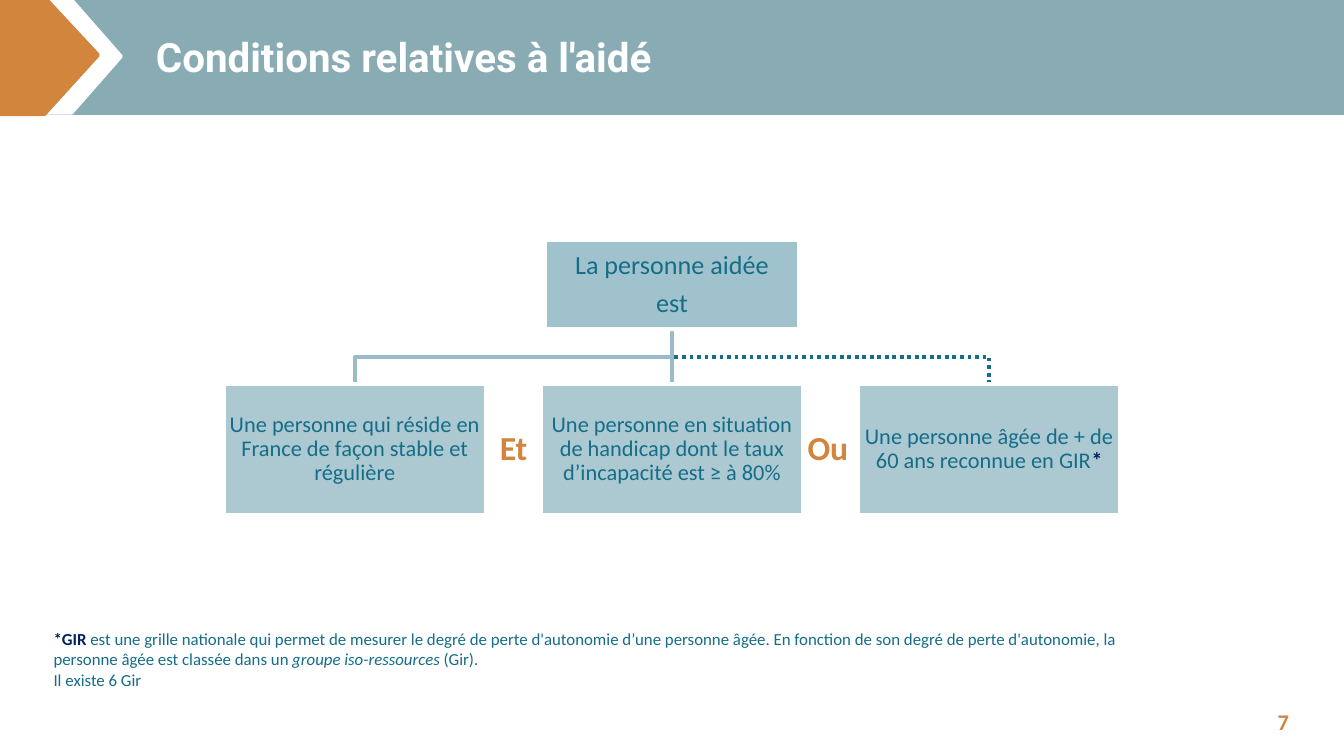
from dataclasses import dataclass

from lxml import etree
from pptx import Presentation
from pptx import util as u
from pptx.dml.color import RGBColor
from pptx.enum import dml, shapes, text
from pptx.oxml.ns import qn

WIDTH = 10
HEIGHT = WIDTH * 9 / 16
CENTER = WIDTH / 2
BAND_HEIGHT = 0.84
COLUMN_PITCH = 2.36
ROOT_TOP, BRANCH_TOP = 1.79, 2.86
ROOT_WIDTH, ROOT_HEIGHT = 1.89, 0.66
BRANCH_WIDTH, BRANCH_HEIGHT = 1.95, 0.97
COLORS = {
    "band": "89ABB3", "accent": "D2853D", "white": "FFFFFF", "box": "89B3C0",
    "link": "9ABCC7", "teal": "156D88", "navy": "002060",
}


@dataclass
class Span:
    words: str
    color: str = "teal"
    bold: bool = False
    italic: bool = False


@dataclass
class Box:
    left: float
    top: float
    width: float
    height: float


@dataclass
class Condition:
    column: int
    spans: list[Span]


@dataclass
class Label:
    box: Box
    lines: list[list[Span]]
    size: float
    wrap: bool = True
    align: text.PP_ALIGN = text.PP_ALIGN.LEFT
    anchor: text.MSO_ANCHOR = text.MSO_ANCHOR.TOP


CONDITIONS = [
    Condition(-1, [Span("Une personne qui réside en France de façon stable et régulière")]),
    Condition(0, [Span("Une personne en situation de handicap dont le taux d’incapacité est ≥ à 80%")]),
    Condition(1, [Span("Une personne âgée de + de 60 ans reconnue en GIR"), Span("*", "navy", True)]),
]
LABELS = [
    Label(Box(3.62, 3.13, 0.41, 0.4), [[Span("Et", "accent", True)]], 18, wrap=False),
    Label(Box(5.91, 3.13, 0.51, 0.4), [[Span("Ou", "accent", True)]], 18, wrap=False),
    Label(Box(0.3, 4.63, 8.52, 0.56), [
        [Span("*GIR ", "navy", True),
         Span("est une grille nationale qui permet de mesurer le degré de perte d'autonomie "
              "d’une personne âgée. En fonction de son degré de perte d'autonomie, la personne "
              "âgée est classée dans un "),
         Span("groupe iso-ressources", italic=True), Span(" (Gir).")],
        [Span("Il existe 6 Gir")],
    ], 9),
    Label(Box(7.36, 5.22, 2.33, 0.3), [[Span("7", "accent", True)]], 12,
          align=text.PP_ALIGN.RIGHT, anchor=text.MSO_ANCHOR.MIDDLE),
]


def rgb(name: str) -> RGBColor:
    return RGBColor.from_string(COLORS[name])


def place(shape, box: Box) -> None:
    shape.left, shape.top = u.Inches(box.left), u.Inches(box.top)
    shape.width, shape.height = u.Inches(box.width), u.Inches(box.height)


def paint(shape, fill: str, line: str, opacity: int = 100) -> None:
    shape.shadow.inherit = False
    shape.fill.solid()
    shape.fill.fore_color.rgb = rgb(fill)
    shape.line.color.rgb = rgb(line)
    shape.line.width = u.Pt(2)
    if opacity < 100:
        color = shape.fill._xPr.find(qn("a:solidFill"))[0]
        etree.SubElement(color, qn("a:alpha")).set("val", str(opacity * 1000))


def add_preset(slide, kind: shapes.MSO_SHAPE, box: Box, fill: str, line: str, opacity: int = 100):
    shape = slide.shapes.add_shape(kind, 0, 0, 0, 0)
    place(shape, box)
    paint(shape, fill, line, opacity)
    return shape


def add_outline(slide, points: list[tuple[float, float]], close: bool):
    start, *rest = [(u.Inches(x), u.Inches(y)) for x, y in points]
    builder = slide.shapes.build_freeform(*start)
    builder.add_line_segments(rest, close=close)
    return builder.convert_to_shape()


def write(frame, lines: list[list[Span]], size: float, align: text.PP_ALIGN) -> None:
    for row, spans in enumerate(lines):
        paragraph = frame.paragraphs[0] if row == 0 else frame.add_paragraph()
        paragraph.alignment = align
        paragraph.font.size = u.Pt(size)
        paragraph.font.name = "Calibri"
        for span in spans:
            run = paragraph.add_run()
            run.text = span.words
            run.font.color.rgb = rgb(span.color)
            run.font.bold = span.bold
            run.font.italic = span.italic


def add_node(slide, box: Box, lines: list[list[Span]], size: float, opacity: int):
    node = add_preset(slide, shapes.MSO_SHAPE.RECTANGLE, box, "box", "white", opacity)
    frame = node.text_frame
    frame.word_wrap = True
    frame.vertical_anchor = text.MSO_ANCHOR.MIDDLE
    frame.margin_left = frame.margin_right = u.Inches(0.01)
    frame.margin_top = frame.margin_bottom = u.Inches(0.01)
    write(frame, lines, size, text.PP_ALIGN.CENTER)
    for paragraph in frame.paragraphs:
        paragraph.line_spacing = 0.9
        paragraph.space_after = u.Pt(size * 0.35)
    return node


def add_branch(slide, column: int) -> None:
    start, end = ROOT_TOP + ROOT_HEIGHT, BRANCH_TOP
    middle, target = (start + end) / 2, CENTER + column * COLUMN_PITCH
    branch = add_outline(
        slide, [(CENTER, start), (CENTER, middle), (target, middle), (target, end)], close=False)
    branch.shadow.inherit = False
    branch.fill.background()
    branch.line.width = u.Pt(2)
    branch.line.color.rgb = rgb("teal" if column > 0 else "link")
    if column > 0:
        branch.line.dash_style = dml.MSO_LINE.ROUND_DOT


def add_label(slide, label: Label) -> None:
    box = slide.shapes.add_textbox(0, 0, 0, 0)
    place(box, label.box)
    box.text_frame.word_wrap = label.wrap
    box.text_frame.vertical_anchor = label.anchor
    write(box.text_frame, label.lines, label.size, label.align)


def add_header(slide) -> None:
    add_preset(slide, shapes.MSO_SHAPE.RECTANGLE, Box(0, 0, WIDTH, BAND_HEIGHT), "band", "band")
    chevron = add_preset(
        slide, shapes.MSO_SHAPE.CHEVRON, Box(0.35, 0, 0.55, BAND_HEIGHT), "white", "white")
    chevron.adjustments[0] = 0.67
    arrow = add_outline(
        slide, [(-0.02, -0.02), (0.33, -0.02), (0.73, 0.41), (0.33, 0.85), (-0.01, 0.85)], close=True)
    paint(arrow, "accent", "accent")

    title = slide.shapes.title
    slide.shapes._spTree.append(title._element)
    place(title, Box(1.06, 0.11, 8.44, 0.62))
    frame = title.text_frame
    frame.text = "Conditions relatives à l'aidé"
    frame.auto_size = text.MSO_AUTO_SIZE.NONE
    frame.vertical_anchor = text.MSO_ANCHOR.MIDDLE
    heading = frame.paragraphs[0]
    heading.alignment = text.PP_ALIGN.LEFT
    heading.font.name, heading.font.size, heading.font.bold = "Roboto", u.Pt(21.6), True
    heading.font.color.rgb = rgb("white")


def add_tree(slide) -> None:
    for column in (1, -1):
        add_branch(slide, column)
    trunk = slide.shapes.add_connector(shapes.MSO_CONNECTOR.STRAIGHT, 0, 0, 0, 0)
    trunk.line.color.rgb = rgb("link")
    trunk.line.width = u.Pt(2)
    etree.SubElement(trunk._element.spPr, qn("a:effectLst"))

    root_box = Box(CENTER - ROOT_WIDTH / 2, ROOT_TOP, ROOT_WIDTH, ROOT_HEIGHT)
    root = add_node(slide, root_box, [[Span("La personne aidée")], [Span("est")]], 14, 80)
    trunk.begin_connect(root, 2)
    for condition in CONDITIONS:
        left = CENTER + condition.column * COLUMN_PITCH - BRANCH_WIDTH / 2
        box = Box(left, BRANCH_TOP, BRANCH_WIDTH, BRANCH_HEIGHT)
        node = add_node(slide, box, [condition.spans], 12, 70)
        if condition.column == 0:
            trunk.end_connect(node, 0)


def main() -> None:
    deck = Presentation()
    deck.slide_width, deck.slide_height = u.Inches(WIDTH), u.Inches(HEIGHT)
    slide = deck.slides.add_slide(deck.slide_layouts[5])
    add_header(slide)
    add_tree(slide)
    for label in LABELS:
        add_label(slide, label)
    deck.save("out.pptx")


if __name__ == "__main__":
    main()
